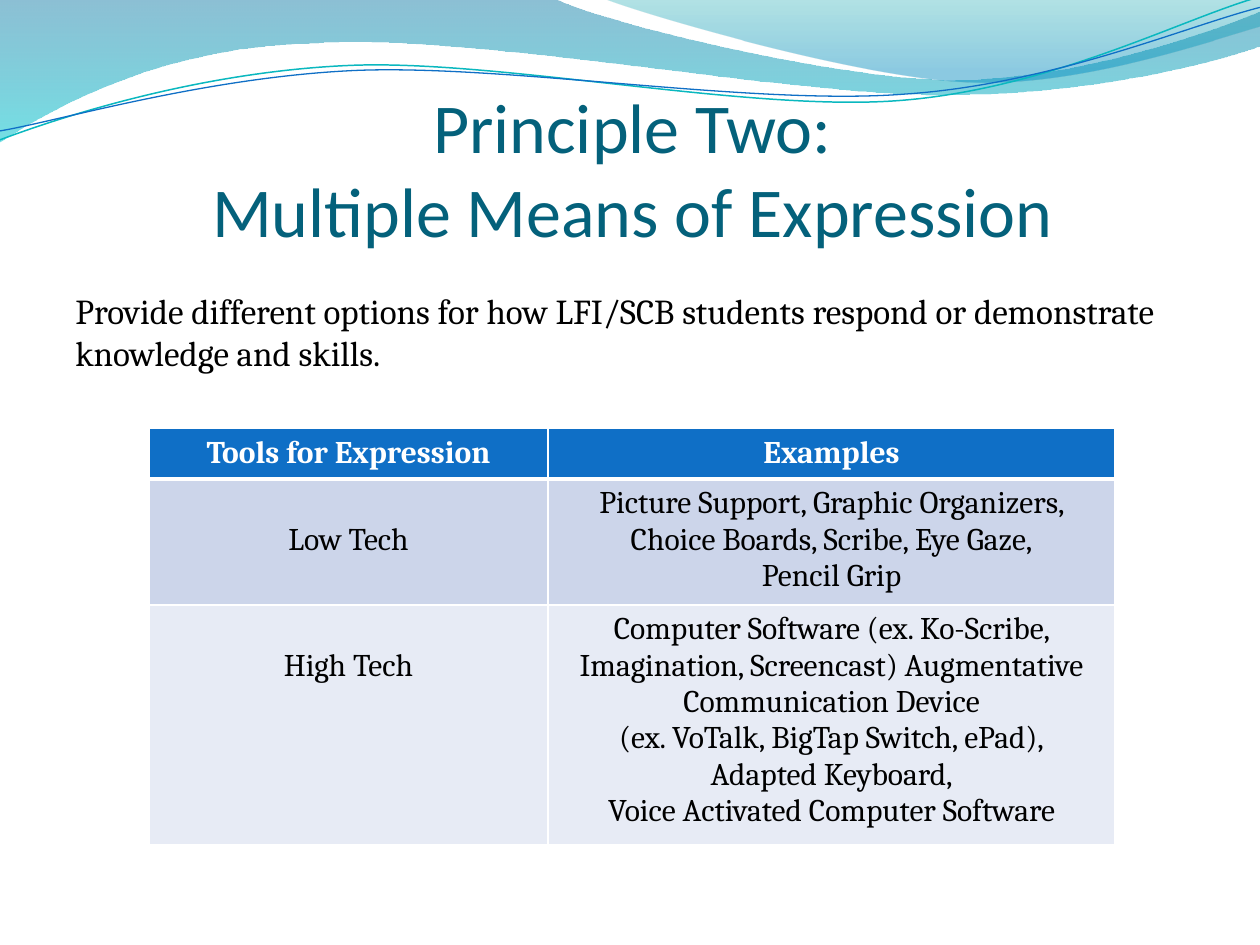
from dataclasses import dataclass

from lxml.etree import SubElement
from pptx import Presentation
from pptx.dml.color import RGBColor
from pptx.enum.text import MSO_ANCHOR, PP_ALIGN
from pptx.oxml.ns import qn
from pptx.shapes.autoshape import Shape
from pptx.slide import Slide
from pptx.table import _Cell
from pptx.text.text import TextFrame
from pptx.util import Cm, Length, Pt

Point = tuple[float, float]

WHITE = RGBColor(0xFF, 0xFF, 0xFF)
BLACK = RGBColor(0x00, 0x00, 0x00)
TITLE_TEAL = RGBColor(0x04, 0x61, 0x7B)
HEADER_BLUE = RGBColor(0x0F, 0x6F, 0xC6)
LOW_TECH_FILL = RGBColor(0xCC, 0xD5, 0xEA)
HIGH_TECH_FILL = RGBColor(0xE7, 0xEB, 0xF5)
LINE_TEAL = RGBColor(0x0A, 0xB8, 0xBF)
BAND_TOP = RGBColor(0x00, 0x74, 0xA1)
BAND_BOTTOM = RGBColor(0x00, 0xC6, 0xCF)
CREST_TOP = RGBColor(0x00, 0xA1, 0xA9)
CREST_BOTTOM = RGBColor(0x00, 0x8B, 0xBF)

SECOND_LINE_MARGIN = Cm(0.86)
HEADER_BORDERS = {"a:lnL": 1, "a:lnR": 1, "a:lnT": 1, "a:lnB": 3}


@dataclass(frozen=True)
class Stop:
    position: float
    color: RGBColor
    opacity: int


@dataclass(frozen=True)
class Wave:
    start: Point
    segments: tuple[tuple[Point, ...], ...]
    stops: tuple[Stop, ...] = ()
    line_color: RGBColor | None = None
    line_width: float = 0


@dataclass(frozen=True)
class ToolRow:
    tool: str
    examples: str
    height: Length
    fill: RGBColor
    is_header: bool = False


WAVES = (
    Wave(
        (0, 0),
        (
            ((11.18, -0.03),),
            ((12.09, 0.43), (16.87, 1.6), (19.25, 1.6)),
            ((21.67, 1.6), (24.33, 0.66), (25.4, 0.23)),
            ((25.43, 0.91),),
            ((24.97, 1.12), (22.1, 1.93), (18.95, 1.91)),
            ((15.8, 1.91), (9.7, 0.71), (6.53, 0.86)),
            ((3.28, 0.91), (1.17, 2.11), (-0.03, 2.87)),
        ),
        stops=(Stop(0, BAND_TOP, 45), Stop(1, BAND_BOTTOM, 55)),
    ),
    Wave(
        (12.17, -0.03),
        (
            ((12.93, 0.28), (17.32, 1.57), (19.53, 1.65)),
            ((21.74, 1.75), (24.41, 0.81), (25.4, 0.53)),
            ((25.4, 0),),
        ),
        stops=(Stop(0, CREST_TOP, 30), Stop(0.8, CREST_BOTTOM, 45)),
    ),
    Wave(
        (0, 2.82),
        (
            ((1.22, 2.36), (4.01, 1.45), (7.04, 1.32)),
            ((10.03, 1.19), (15.06, 2.26), (18.11, 2.03)),
            ((21.16, 1.8), (23.83, 0.38), (25.35, -0.05)),
        ),
        line_color=LINE_TEAL,
        line_width=0.85,
    ),
    Wave(
        (0, 2.64),
        (
            ((1.19, 2.44), (4.17, 1.55), (7.19, 1.42)),
            ((10.24, 1.3), (15.16, 2.13), (18.21, 1.9)),
            ((21.23, 1.7), (23.9, 0.53), (25.4, 0.15)),
        ),
        line_color=HEADER_BLUE,
        line_width=0.75,
    ),
)

TOOL_ROWS = (
    ToolRow("Tools for Expression", "Examples", Cm(0.41), HEADER_BLUE, True),
    ToolRow(
        "Low Tech",
        "Picture Support, Graphic Organizers, Choice Boards, Scribe, Eye Gaze,\nPencil Grip",
        Cm(1.04),
        LOW_TECH_FILL,
    ),
    ToolRow(
        "High Tech",
        "Computer Software (ex. Ko-Scribe, Imagination, Screencast) Augmentative "
        "Communication Device\v(ex. VoTalk, BigTap Switch, ePad),\n"
        "Adapted Keyboard,\nVoice Activated Computer Software",
        Cm(1.04),
        HIGH_TECH_FILL,
    ),
)


def bend(ribbon: Shape, wave: Wave) -> None:
    outline = next(ribbon.element.iter(qn("a:path")))
    corners = iter(outline.findall(qn("a:lnTo")))
    for segment in wave.segments:
        steps = [next(corners) for _ in segment]
        if len(steps) == 3:
            curve = SubElement(outline, qn("a:cubicBezTo"))
            steps[0].addprevious(curve)
            for step in steps:
                curve.append(step[0])
                outline.remove(step)


def draw_wave(slide: Slide, wave: Wave) -> None:
    builder = slide.shapes.build_freeform(*map(Cm, wave.start))
    builder.add_line_segments(
        [(Cm(x), Cm(y)) for segment in wave.segments for x, y in segment],
        close=bool(wave.stops),
    )
    ribbon = builder.convert_to_shape()
    bend(ribbon, wave)
    ribbon.shadow.inherit = False
    if wave.line_color is not None:
        ribbon.fill.background()
        ribbon.line.color.rgb = wave.line_color
        ribbon.line.width = Pt(wave.line_width)
        return
    ribbon.line.fill.background()
    ribbon.fill.gradient()
    ribbon.fill.gradient_angle = 270
    for target, stop in zip(ribbon.fill.gradient_stops, wave.stops):
        target.position = stop.position
        target.color.rgb = stop.color
    for color, stop in zip(ribbon.element.iter(qn("a:srgbClr")), wave.stops):
        SubElement(color, qn("a:alpha")).set("val", str(stop.opacity * 1000))


def write(frame: TextFrame, text: str, *, font: str = "Cambria", size: float = 18,
          color: RGBColor = BLACK, bold: bool = False,
          align: PP_ALIGN = PP_ALIGN.CENTER, space_before: float = 0) -> None:
    frame.word_wrap = True
    for index, content in enumerate(text.split("\n")):
        paragraph = frame.add_paragraph() if index else frame.paragraphs[0]
        paragraph.alignment = align
        paragraph.space_before = Pt(space_before)
        for part, words in enumerate(content.split("\v")):
            if part:
                paragraph.add_line_break()
            run = paragraph.add_run()
            run.text = words
            run.font.name = font
            run.font.size = Pt(size)
            run.font.bold = bold
            run.font.color.rgb = color


def fill_cell(cell: _Cell, text: str, row: ToolRow) -> None:
    write(cell.text_frame, text, color=WHITE if row.is_header else BLACK, bold=row.is_header)
    if row.is_header:
        properties = cell._tc.get_or_add_tcPr()
        for side, width in HEADER_BORDERS.items():
            border = SubElement(properties, qn(side), w=str(Pt(width)))
            SubElement(SubElement(border, qn("a:solidFill")), qn("a:srgbClr"), val=str(WHITE))
    cell.fill.solid()
    cell.fill.fore_color.rgb = row.fill


def draw_tools(slide: Slide) -> None:
    frame = slide.shapes.add_table(len(TOOL_ROWS), 2, Cm(3), Cm(8.64), Cm(19.48), Cm(8.38))
    tools = frame.table
    for column, width in zip(tools.columns, (Cm(8.05), Cm(11.43))):
        column.width = width
    for index, row in enumerate(TOOL_ROWS):
        tools.rows[index].height = row.height
        fill_cell(tools.cell(index, 0), row.tool, row)
        fill_cell(tools.cell(index, 1), row.examples, row)
        if not row.is_header:
            tools.cell(index, 0).margin_top = SECOND_LINE_MARGIN
    frame.height = Cm(8.38)


def main() -> None:
    presentation = Presentation()
    presentation.slide_width, presentation.slide_height = Cm(25.4), Cm(19.05)
    slide = presentation.slides.add_slide(presentation.slide_layouts[6])
    for wave in WAVES:
        draw_wave(slide, wave)
    title = slide.shapes.add_textbox(Cm(1.32), Cm(1.9), Cm(22.86), Cm(3.18)).text_frame
    title.vertical_anchor = MSO_ANCHOR.BOTTOM
    title.margin_left = title.margin_right = title.margin_bottom = 0
    write(title, "Principle Two:\vMultiple Means of Expression",
          font="Calibri", size=40, color=TITLE_TEAL)
    guidance = slide.shapes.add_textbox(Cm(1.27), Cm(5.72), Cm(22.86), Cm(12.19)).text_frame
    write(guidance, "Provide different options for how LFI/SCB students respond or "
          "demonstrate knowledge and skills.", size=20, align=PP_ALIGN.LEFT, space_before=4)
    draw_tools(slide)
    presentation.save("out.pptx")


if __name__ == "__main__":
    main()
